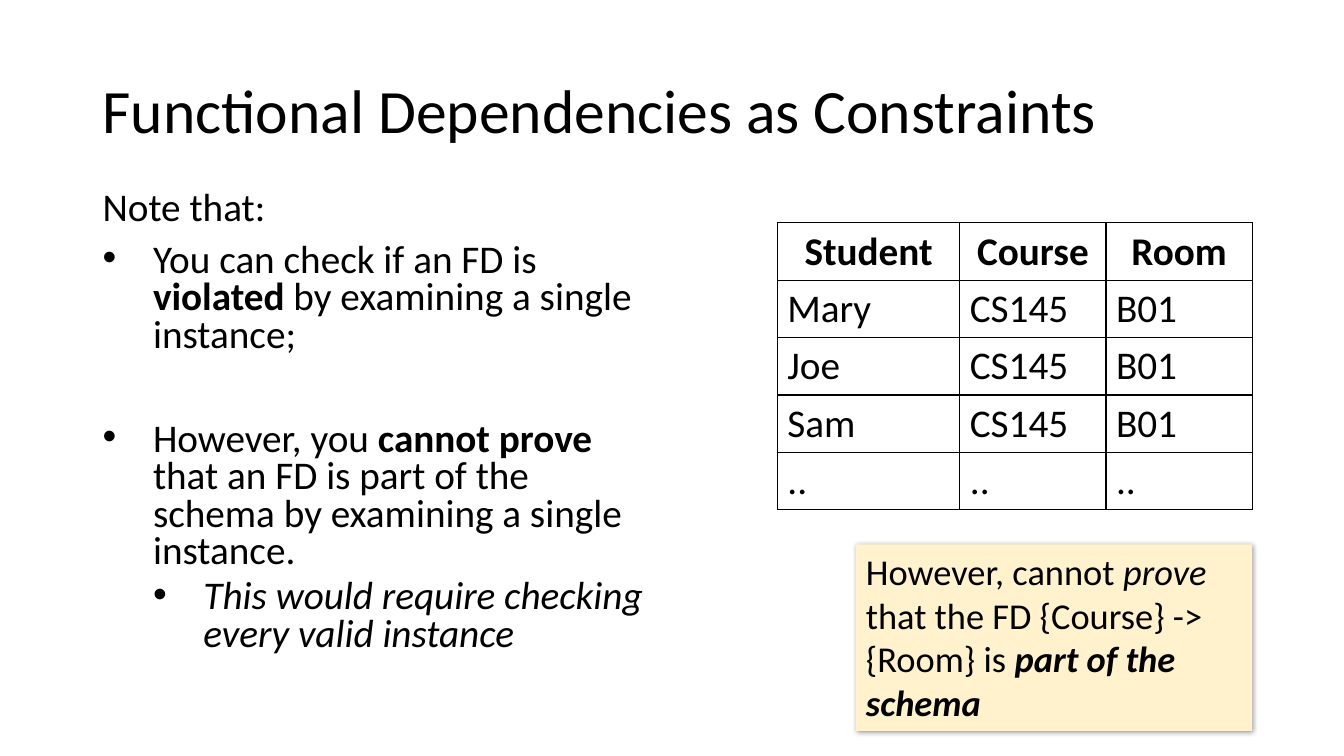
from dataclasses import dataclass, field
from typing import Any

from lxml.etree import SubElement
from pptx import Presentation
from pptx.dml.color import RGBColor as Color
from pptx.enum.shapes import MSO_SHAPE as Preset
from pptx.enum.text import MSO_ANCHOR as Anchor, PP_ALIGN as Align
from pptx.oxml import parse_xml
from pptx.oxml.ns import nsdecls, qn
from pptx.util import Inches, Pt


@dataclass(frozen=True)
class Theme:
    font: str = "Calibri"
    ink: Color = Color.from_string("000000")
    note_fill: Color = Color.from_string("FFF2CC")
    title_size: int = 44
    body_size: int = 28
    note_size: int = 26


@dataclass(frozen=True)
class Run:
    text: str
    style: dict[str, bool] = field(default_factory=dict)


@dataclass(frozen=True)
class Block:
    """A paragraph; indent is the text's left edge in inches, 0 for no bullet."""
    runs: list[Run]
    layout: dict[str, Any] = field(default_factory=dict)
    indent: float = 0


@dataclass(frozen=True)
class Box:
    left: float
    top: float
    width: float
    height: float

    def lengths(self) -> list[int]:
        return [Inches(v) for v in (self.left, self.top, self.width, self.height)]


THEME = Theme()
BOLD = {"bold": True}
ITALIC = {"italic": True}
HANGING = 0.5

# Slide content
TITLE = Block([Run("Functional Dependencies as Constraints")], {"line_spacing": 0.9})
BODY = [
    Block([Run("Note that:")], {"line_spacing": 0.8, "space_before": Pt(10)}),
    Block([Run("You can check if an FD is "), Run("violated", BOLD),
           Run(" by examining a single instance;")],
          {"line_spacing": 0.8, "space_before": Pt(10)}, HANGING),
    Block([Run("However, you "), Run("cannot prove", BOLD),
           Run(" that an FD is part of the schema by examining a single instance.")],
          {"line_spacing": 0.8, "space_before": Pt(47)}, HANGING),
    Block([Run("This would require checking every valid instance", ITALIC)],
          {"line_spacing": 0.8, "space_before": Pt(5), "level": 1}, 2 * HANGING),
]
NOTE = Block([Run("However, cannot "), Run("prove ", ITALIC),
              Run("that the FD {Course} -> {Room} is "),
              Run("part of the schema", BOLD | ITALIC)], {"alignment": Align.LEFT})
COURSE_ROWS = [
    ("Student", "Course", "Room"),
    ("Mary", "CS145", "B01"),
    ("Joe", "CS145", "B01"),
    ("Sam", "CS145", "B01"),
    ("..", "..", ".."),
]
COLUMN_WIDTHS = (1.81, 1.45, 1.45)
ROW_HEIGHT = 0.57


def apply(target: Any, values: dict[str, Any]) -> None:
    for name, value in values.items():
        setattr(target, name, value)


def add_bullet(paragraph: Any, indent: float) -> None:
    properties = paragraph._p.get_or_add_pPr()
    properties.set("marL", str(Inches(indent)))
    properties.set("indent", str(-Inches(HANGING)))
    SubElement(properties, qn("a:buFont")).set("typeface", "Arial")
    SubElement(properties, qn("a:buChar")).set("char", "•")


def write(frame: Any, blocks: list[Block], size: int) -> None:
    frame.word_wrap = True
    for index, block in enumerate(blocks):
        paragraph = frame.add_paragraph() if index else frame.paragraphs[0]
        apply(paragraph, block.layout)
        if block.indent:
            add_bullet(paragraph, block.indent)
        for part in block.runs:
            run = paragraph.add_run()
            run.text = part.text
            apply(run.font, {"name": THEME.font, "size": Pt(size)} | part.style)
            run.font.color.rgb = THEME.ink


def add_text(slide: Any, box: Box, blocks: list[Block], size: int, anchor: Anchor) -> None:
    frame = slide.shapes.add_textbox(*box.lengths()).text_frame
    frame.vertical_anchor = anchor
    write(frame, blocks, size)


def add_borders(cell: Any) -> None:
    properties = cell._tc.get_or_add_tcPr()
    for side in ("lnL", "lnR", "lnT", "lnB"):
        properties.append(parse_xml(
            f'<a:{side} {nsdecls("a")} w="{Pt(1)}"><a:solidFill>'
            f'<a:srgbClr val="{THEME.ink}"/></a:solidFill></a:{side}>'))


def add_course_table(slide: Any, left: float, top: float) -> None:
    box = Box(left, top, sum(COLUMN_WIDTHS), ROW_HEIGHT * len(COURSE_ROWS))
    table = slide.shapes.add_table(
        len(COURSE_ROWS), len(COLUMN_WIDTHS), *box.lengths()).table
    apply(table, {"first_row": False, "horz_banding": False})
    for column, width in zip(table.columns, COLUMN_WIDTHS):
        column.width = Inches(width)
    for row_index, values in enumerate(COURSE_ROWS):
        header = row_index == 0
        layout = {"alignment": Align.CENTER if header else Align.LEFT}
        for column_index, value in enumerate(values):
            cell = table.cell(row_index, column_index)
            add_borders(cell)
            cell.fill.background()
            block = Block([Run(value, {"bold": header})], layout)
            write(cell.text_frame, [block], THEME.body_size)


def add_note(slide: Any, box: Box) -> None:
    shape = slide.shapes.add_shape(Preset.RECTANGLE, *box.lengths())
    shape.fill.solid()
    shape.fill.fore_color.rgb = THEME.note_fill
    shape.line.fill.background()
    shape.shadow.inherit = False
    effects = shape._element.spPr.find(qn("a:effectLst"))
    effects.append(parse_xml(
        f'<a:outerShdw {nsdecls("a")} blurRad="{Pt(4)}" dist="{Pt(1)}" dir="2700000">'
        f'<a:srgbClr val="{THEME.ink}"><a:alpha val="40000"/></a:srgbClr></a:outerShdw>'))
    shape.text_frame.vertical_anchor = Anchor.TOP
    write(shape.text_frame, [NOTE], THEME.note_size)


def main() -> None:
    presentation = Presentation()
    apply(presentation, {"slide_width": Inches(13.33), "slide_height": Inches(7.5)})
    slide = presentation.slides.add_slide(presentation.slide_layouts[6])

    # Title, example instance, callout and explanation
    add_text(slide, Box(0.92, 0.4, 11.5, 1.45), [TITLE], THEME.title_size, Anchor.MIDDLE)
    add_course_table(slide, 7.71, 2.21)
    add_note(slide, Box(8.49, 5.4, 3.93, 1.85))
    add_text(slide, Box(0.92, 1.85, 5.7, 5.15), BODY, THEME.body_size, Anchor.TOP)

    presentation.save("out.pptx")


if __name__ == "__main__":
    main()
